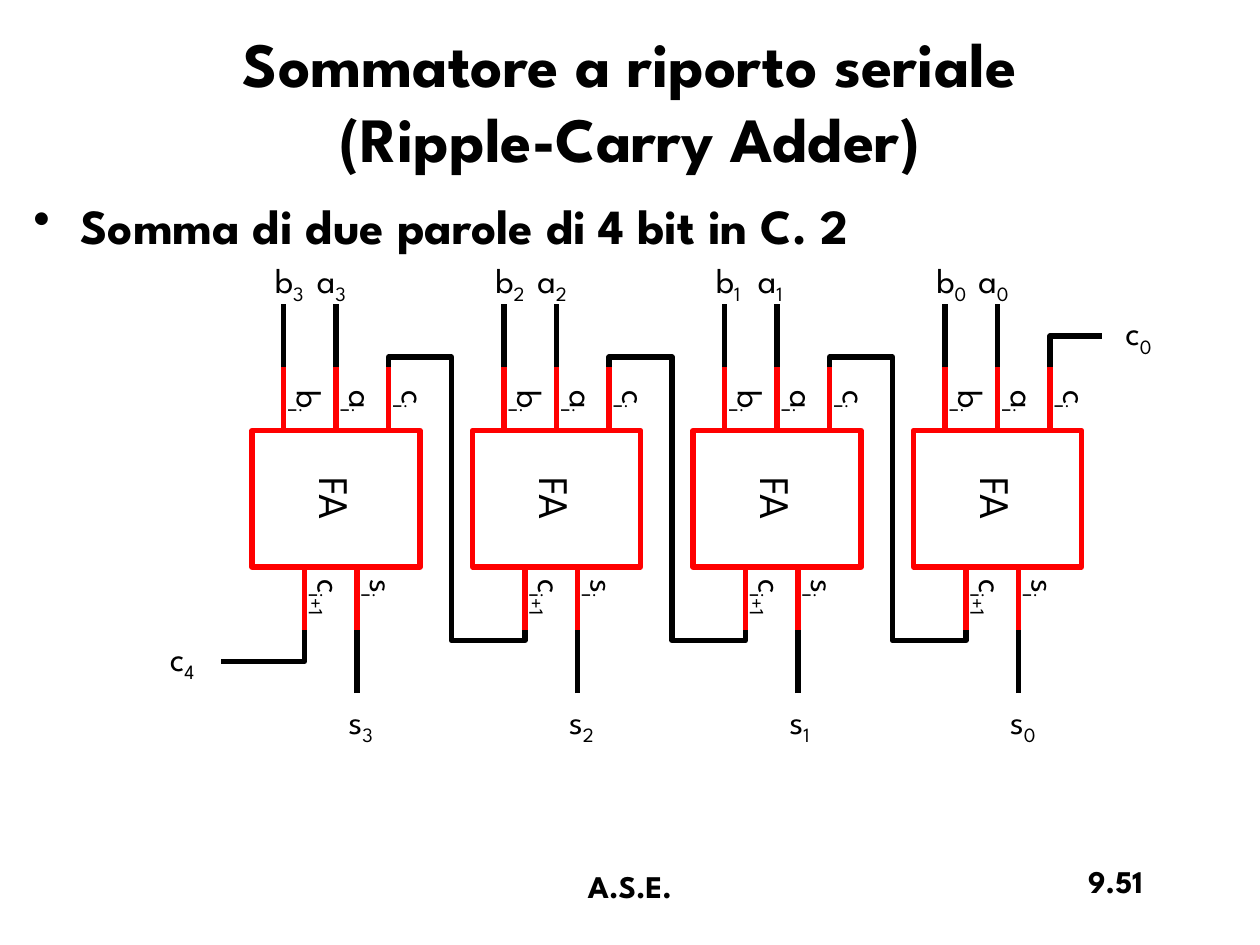
from pptx import Presentation
from pptx import util as u
from pptx.dml.color import RGBColor
from pptx.enum import shapes, text
from pptx.oxml.ns import qn
from lxml import etree

Pt = u.Pt
COLORS = {"ink": "000000", "adder": "FF0000"}
FONT = "League Spartan"
LINE_WIDTH = 3

# Adder stages, left to right; pin offsets count from the b pin
STAGES = [3, 2, 1, 0]
FIRST_STAGE_X, STAGE_PITCH = 162, 126
INPUT_PINS = {"b": 0, "a": 30, "c": 60}
CARRY_OUT, SUM_OUT = 12, 42
WIRE_TOP, PIN_TOP, BOX_TOP = 174, 210, 246
BOX_BOTTOM, PIN_BOTTOM, WIRE_BOTTOM = 324, 360, 396
BOX_WIDTH, BOX_HEIGHT = 96, 78

FRAME = {"word_wrap": True, "vertical_anchor": text.MSO_ANCHOR.TOP}
LABEL_FRAME = {"word_wrap": False, "auto_size": text.MSO_AUTO_SIZE.SHAPE_TO_FIT_TEXT}


def rgb(name):
    return RGBColor.from_string(COLORS[name])


def apply(target, values):
    for attribute, value in values.items():
        setattr(target, attribute, value)


def style_line(line, color):
    line.color.rgb = rgb(color)
    line.width = Pt(LINE_WIDTH)


def add_run(paragraph, words, size, bold=False, subscript=False):
    run = paragraph.add_run()
    run.text = words
    apply(run.font, {"name": FONT, "size": Pt(size), "bold": bold})
    run.font.color.rgb = rgb("ink")
    if subscript:
        run._r.get_or_add_rPr().set("baseline", "-25000")


def add_text_box(slide, left, top, width, height, frame_values):
    box = slide.shapes.add_textbox(Pt(left), Pt(top), Pt(width), Pt(height))
    apply(box.text_frame, frame_values)
    return box


def add_heading(slide, area, lines, size, align, anchor=text.MSO_ANCHOR.TOP):
    """Bold text of one or more lines; returns its paragraph."""
    box = add_text_box(slide, *area, {**FRAME, "vertical_anchor": anchor})
    paragraph = box.text_frame.paragraphs[0]
    paragraph.alignment = align
    for number, line in enumerate(lines):
        if number:
            paragraph.add_line_break()
        add_run(paragraph, line, size, bold=True)
    return paragraph


def add_bullet(paragraph, indent):
    properties = paragraph._p.get_or_add_pPr()
    properties.set("marL", str(Pt(indent)))
    properties.set("indent", str(-Pt(indent)))
    etree.SubElement(properties, qn("a:buChar")).set("char", "•")


def add_signal(slide, left, top, name, index, width=34, rotation=0):
    """Signal name with a subscript index."""
    label = add_text_box(slide, left, top, width, 31, LABEL_FRAME)
    label.rotation = rotation
    paragraph = label.text_frame.paragraphs[0]
    add_run(paragraph, name, 20)
    add_run(paragraph, index, 20, subscript=True)


def add_wire(slide, x, start, end, color):
    wire = slide.shapes.add_connector(
        shapes.MSO_CONNECTOR.STRAIGHT, Pt(x), Pt(start), Pt(x), Pt(end))
    style_line(wire.line, color)
    etree.SubElement(wire._element.spPr, qn("a:effectLst"))
    return wire


def add_bent_wire(slide, points):
    builder = slide.shapes.build_freeform(*points[0], scale=Pt(1))
    builder.add_line_segments(points[1:], close=False)
    wire = builder.convert_to_shape()
    wire.shadow.inherit = False
    wire.fill.background()
    style_line(wire.line, "ink")


def add_adder_box(slide, center_x):
    """Full adder, turned a quarter so that its text reads downwards."""
    center_y = (BOX_TOP + BOX_BOTTOM) / 2
    box = slide.shapes.add_shape(
        shapes.MSO_SHAPE.RECTANGLE,
        Pt(center_x - BOX_HEIGHT / 2), Pt(center_y - BOX_WIDTH / 2),
        Pt(BOX_HEIGHT), Pt(BOX_WIDTH))
    box.rotation = 90
    box.shadow.inherit = False
    box.fill.background()
    style_line(box.line, "adder")
    apply(box.text_frame, {"word_wrap": False, "vertical_anchor": text.MSO_ANCHOR.MIDDLE})
    paragraph = box.text_frame.paragraphs[0]
    paragraph.alignment = text.PP_ALIGN.CENTER
    add_run(paragraph, "FA", 24)
    return box


def add_stage(slide, x, index):
    box_center = x + INPUT_PINS["a"]
    box = add_adder_box(slide, box_center)

    # Input pins with their inner names
    for name, offset in INPUT_PINS.items():
        pin = add_wire(slide, x + offset, BOX_TOP, PIN_TOP, "adder")
        if x + offset == box_center:
            # The quarter turn brings the left side (1) to the top
            pin.begin_connect(box, 1)
            apply(pin, {"begin_x": Pt(box_center), "begin_y": Pt(BOX_TOP)})
        add_signal(slide, x + offset + 0.7, 215.5, name, "i", 30, 90)

    # Output pins with their inner names
    for offset in (CARRY_OUT, SUM_OUT):
        add_wire(slide, x + offset, PIN_BOTTOM, BOX_BOTTOM, "adder")
    add_signal(slide, x + CARRY_OUT - 7, 331, "c", "i+1", 45, 90)
    add_signal(slide, x + SUM_OUT + 1, 323, "s", "i", 29, 90)

    # Outer wires and bit names
    for name, shift in (("b", -12), ("a", -18)):
        pin_x = x + INPUT_PINS[name]
        add_wire(slide, pin_x, PIN_TOP, WIRE_TOP, "ink")
        add_signal(slide, pin_x + shift, 144, name, str(index))
    add_wire(slide, x + SUM_OUT, WIRE_BOTTOM, PIN_BOTTOM, "ink")
    add_signal(slide, x + SUM_OUT - 12, WIRE_BOTTOM, "s", str(index))


def add_carry(slide, sender_x):
    """Carry from one stage to the input of the stage on its left."""
    start = sender_x + CARRY_OUT
    middle = sender_x - 30
    end = sender_x - STAGE_PITCH + INPUT_PINS["c"]
    low, high = PIN_BOTTOM + 6, PIN_TOP - 6
    add_bent_wire(slide, [(start, PIN_BOTTOM), (start, low), (middle, low),
                          (middle, high), (end, high), (end, PIN_TOP)])


def main():
    deck = Presentation()
    apply(deck, {"slide_width": Pt(720), "slide_height": Pt(540)})
    slide = deck.slides.add_slide(deck.slide_layouts[6])
    align = text.PP_ALIGN

    # Title and bullet
    add_heading(slide, (12, 12, 696, 90),
                ["Sommatore a riporto seriale", "(Ripple-Carry Adder)"],
                36, align.CENTER, text.MSO_ANCHOR.MIDDLE)
    bullet = add_heading(slide, (12, 108, 696, 372),
                         ["Somma di due parole di 4 bit in C. 2"], 28, align.LEFT)
    bullet.space_before = Pt(5.6)
    add_bullet(bullet, 27)

    # Stages and the carries between them
    stage_xs = [FIRST_STAGE_X + STAGE_PITCH * place for place in range(len(STAGES))]
    for x, index in zip(stage_xs, STAGES):
        add_stage(slide, x, index)
    for x in stage_xs[1:]:
        add_carry(slide, x)

    # First carry in and last carry out
    carry_in = stage_xs[-1] + INPUT_PINS["c"]
    add_bent_wire(slide, [(carry_in, PIN_TOP), (carry_in, 192), (carry_in + 30, 192)])
    add_signal(slide, carry_in + 36, 174, "c", "0")
    carry_out = stage_xs[0] + CARRY_OUT
    add_bent_wire(slide, [(carry_out, PIN_BOTTOM), (carry_out, 378), (carry_out - 48, 378)])
    add_signal(slide, carry_out - 84, 360, "c", "4")

    # Footer
    add_heading(slide, (510, 489, 150, 36), ["9.51"], 18, align.RIGHT)
    add_heading(slide, (246, 492, 228, 36), ["A.S.E."], 18, align.CENTER)

    deck.save("out.pptx")


if __name__ == "__main__":
    main()
